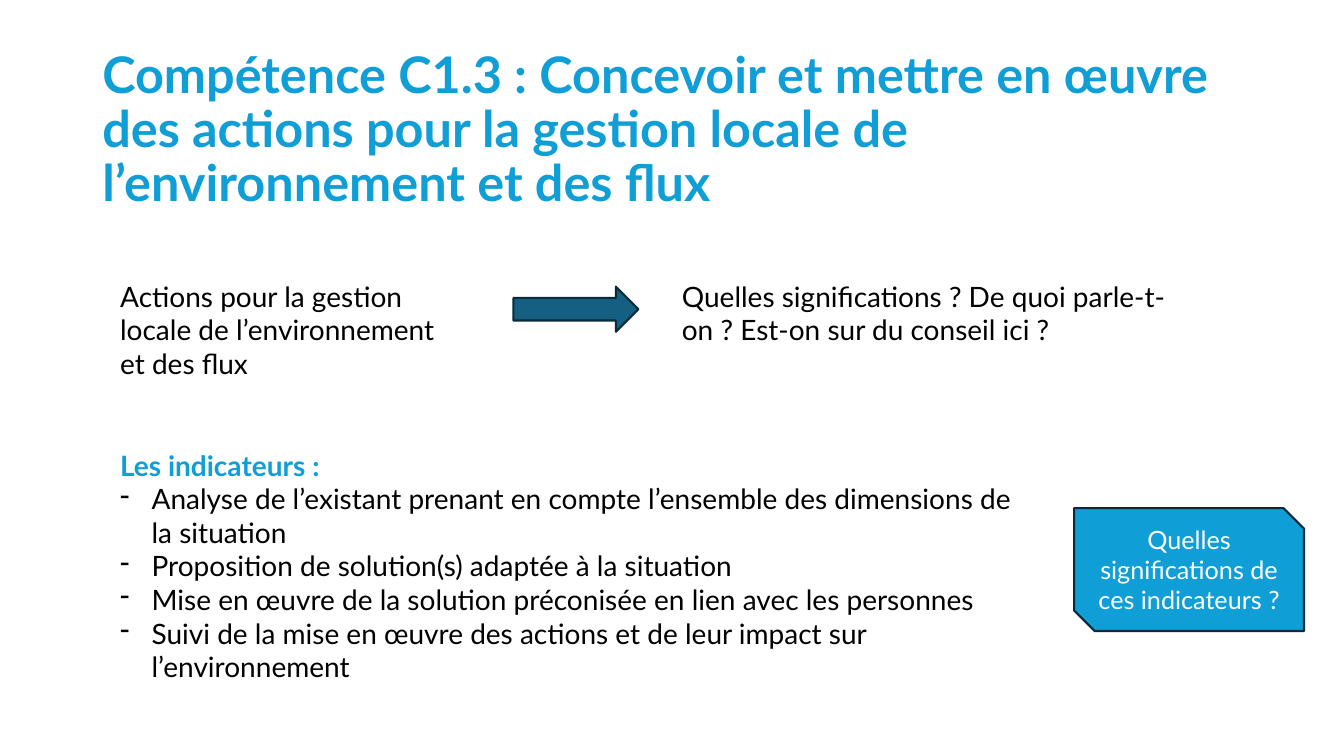
from lxml import etree
from pptx import Presentation
from pptx.dml.color import RGBColor
from pptx.enum.shapes import MSO_SHAPE
from pptx.enum.text import MSO_ANCHOR, PP_ALIGN
from pptx.oxml.ns import qn
from pptx.util import Pt

PX = 9525  # EMU per px, 96 px to the inch
FONT = "Lato"
COLORS = {
    "accent": "0F9ED5",
    "arrow": "156082",
    "outline": "092A39",
    "text": "000000",
    "light": "FFFFFF",
}
ARROW, SNIPPED = MSO_SHAPE.RIGHT_ARROW, MSO_SHAPE.SNIP_2_DIAG_RECTANGLE
MIDDLE, CENTER = MSO_ANCHOR.MIDDLE, PP_ALIGN.CENTER
BULLET_INDENT = 30

TITLE = ("Compétence C1.3 : Concevoir et mettre en œuvre des actions "
         "pour la gestion locale de l’environnement et des flux")
TOPIC = "Actions pour la gestion locale de l’environnement et des flux"
QUESTION = "Quelles significations ? De quoi parle-t-on ? Est-on sur du conseil ici ?"
INDICATORS_HEADING = "Les indicateurs :"
INDICATORS = [
    "Analyse de l’existant prenant en compte l’ensemble des dimensions de la situation",
    "Proposition de solution(s) adaptée à la situation",
    "Mise en œuvre de la solution préconisée en lien avec les personnes",
    "Suivi de la mise en œuvre des actions et de leur impact sur l’environnement",
]
CALLOUT = "Quelles significations de ces indicateurs ?"


def rgb(name):
    return RGBColor.from_string(COLORS[name])


def emu(box):
    return [v * PX for v in box]


def style(p, size, color="text", bold=False):
    for r in p.runs:
        r.font.name = FONT
        r.font.size = Pt(size)
        r.font.bold = bold
        r.font.color.rgb = rgb(color)


def add_text(slide, box, text, size=20, color="text", bold=False):
    tf = slide.shapes.add_textbox(*emu(box)).text_frame
    tf.word_wrap = True
    tf.text = text
    style(tf.paragraphs[0], size, color, bold)
    return tf


def add_block(slide, kind, box, fill):
    s = slide.shapes.add_shape(kind, *emu(box))
    s.shadow.inherit = False
    s.fill.solid()
    s.fill.fore_color.rgb = rgb(fill)
    s.line.color.rgb = rgb("outline")
    s.line.width = Pt(1.5)
    return s


def add_dash(p):
    """Give the paragraph a dash bullet with a hanging indent."""
    pPr = p._p.get_or_add_pPr()
    pPr.set("marL", str(BULLET_INDENT * PX))
    pPr.set("indent", str(-BULLET_INDENT * PX))
    etree.SubElement(pPr, qn("a:buFontTx"))
    etree.SubElement(pPr, qn("a:buChar")).set("char", "-")


def add_title(slide, box):
    tf = add_text(slide, box, TITLE, 36, "accent", True)
    tf.vertical_anchor = MIDDLE
    tf.paragraphs[0].line_spacing = 0.9


def add_topic_row(slide, x, y):
    """Topic on the left, arrow, then the question it raises."""
    add_text(slide, (x, y, 344, 107), TOPIC)
    add_block(slide, ARROW, (x + 384, y + 12, 119, 43), "arrow")
    add_text(slide, (x + 535, y, 493, 74), QUESTION)


def add_indicators(slide, box):
    tf = add_text(slide, box, INDICATORS_HEADING, color="accent", bold=True)
    for indicator in INDICATORS:
        p = tf.add_paragraph()
        p.text = indicator
        add_dash(p)
        style(p, 20)


def add_callout(slide, box):
    tf = add_block(slide, SNIPPED, box, "accent").text_frame
    tf.word_wrap = True
    tf.vertical_anchor = MIDDLE
    tf.text = CALLOUT
    p = tf.paragraphs[0]
    p.alignment = CENTER
    style(p, 18, "light")


def main():
    prs = Presentation()
    prs.slide_width, prs.slide_height = emu((1280, 720))
    slide = prs.slides.add_slide(prs.slide_layouts[6])
    add_title(slide, (88, 38, 1104, 174))
    add_topic_row(slide, 105, 261)
    add_indicators(slide, (105, 422, 878, 204))
    add_callout(slide, (1023, 484, 219, 117))
    prs.save("out.pptx")


if __name__ == "__main__":
    main()
